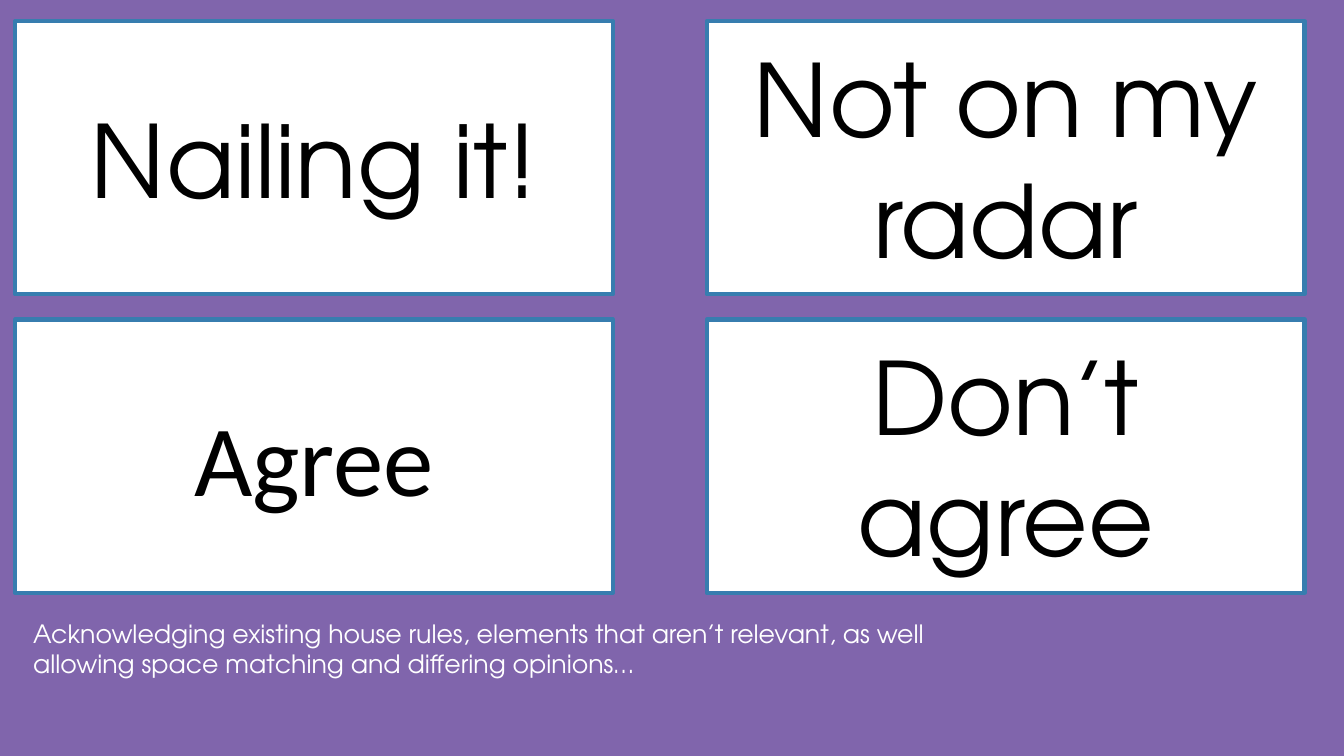
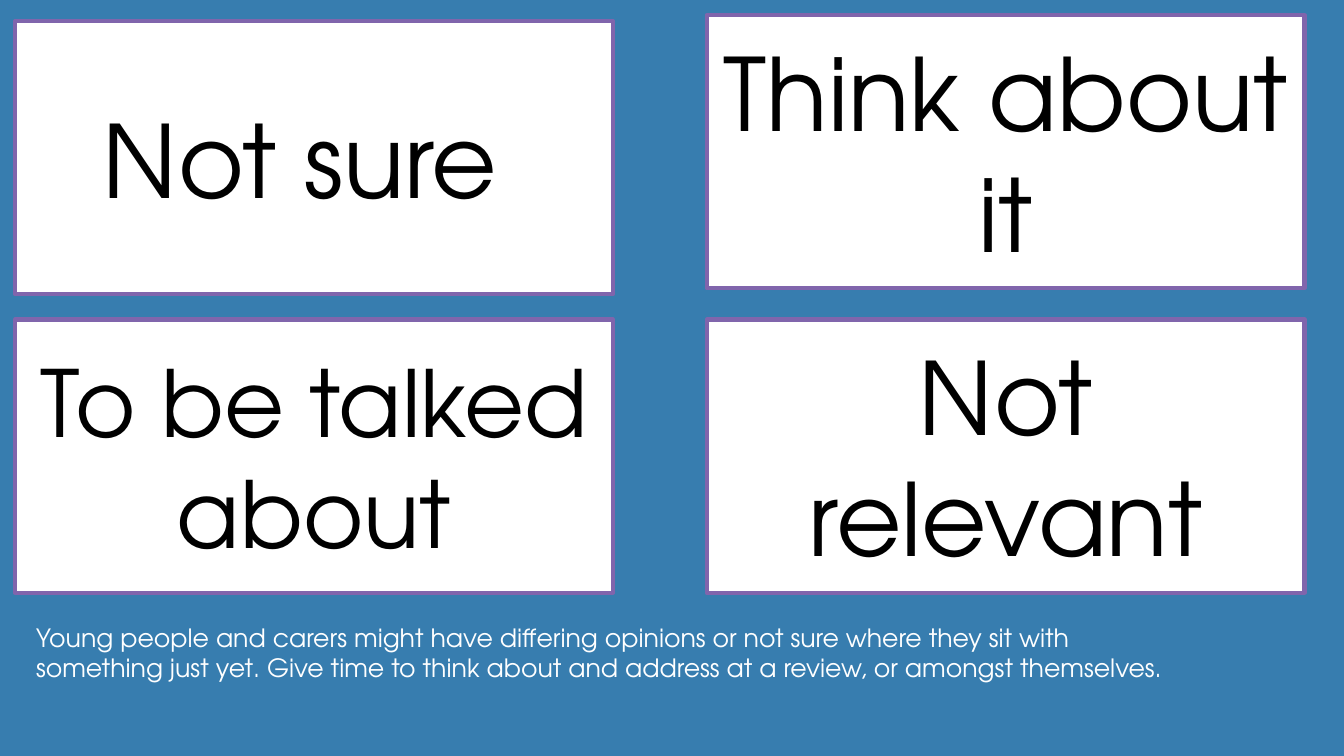
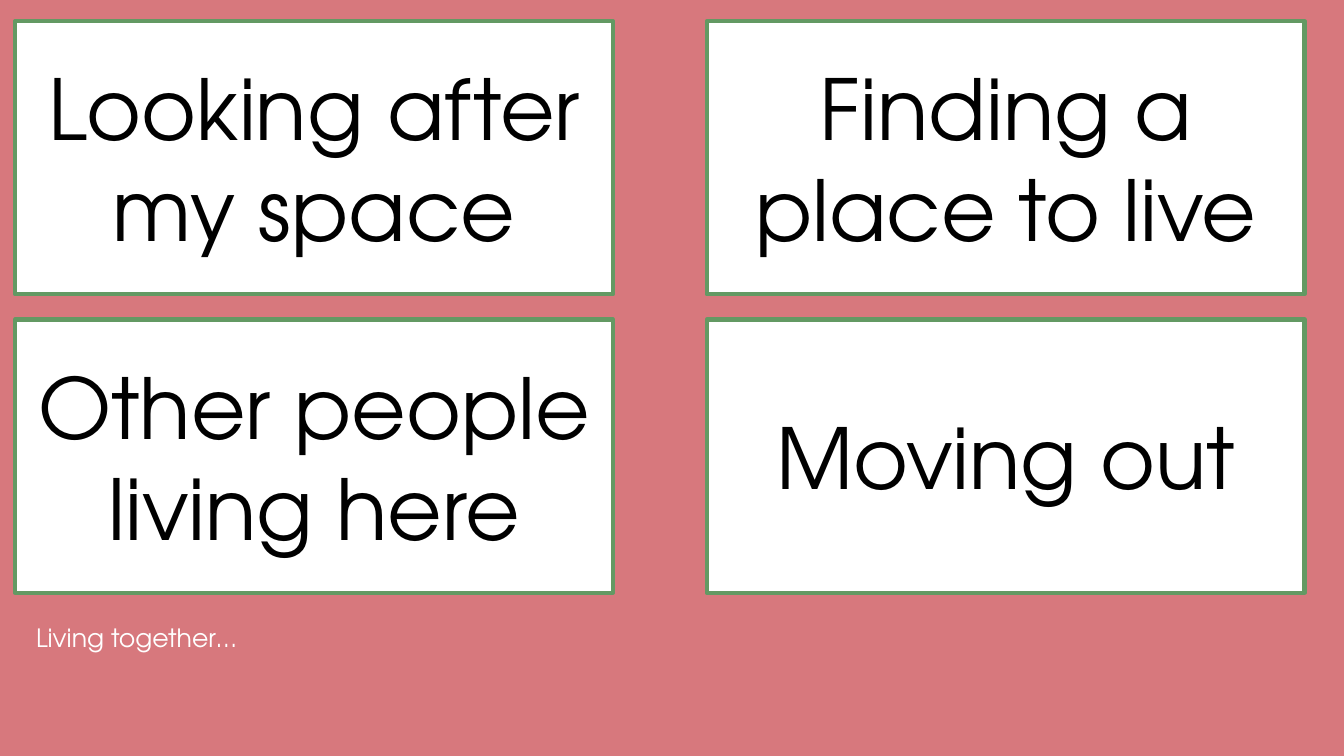
from dataclasses import dataclass

from pptx import Presentation
from pptx.dml.color import RGBColor
from pptx.enum.shapes import MSO_SHAPE
from pptx.enum.text import MSO_ANCHOR, MSO_AUTO_SIZE, PP_ALIGN
from pptx.util import Inches, Pt

RECT = MSO_SHAPE.RECTANGLE
MIDDLE = MSO_ANCHOR.MIDDLE
FIT_SHAPE = MSO_AUTO_SIZE.SHAPE_TO_FIT_TEXT
LEFT, CENTER = PP_ALIGN.LEFT, PP_ALIGN.CENTER

# Shared look
PURPLE = RGBColor(0x80, 0x65, 0xAC)
BLUE = RGBColor(0x37, 0x7D, 0xAF)
ROSE = RGBColor(0xD7, 0x78, 0x7D)
GREEN = RGBColor(0x63, 0x99, 0x63)
WHITE = RGBColor(0xFF, 0xFF, 0xFF)
BLACK = RGBColor(0x00, 0x00, 0x00)
FONT = "TeX Gyre Adventor"

# Card grid, in inches
GRID_LEFT, GRID_TOP = 0.15, 0.21
CARD_W, CARD_H = 5.93, 2.71
COL_STEP, ROW_STEP = 6.86, 2.96
COLUMNS = 2


@dataclass(frozen=True)
class Card:
    text: str
    size: int = 72
    font: str = FONT
    raised: float = 0


@dataclass(frozen=True)
class Caption:
    text: str
    width: float
    height: float = 0.71
    left: float = 0.26
    top: float = 6.12


@dataclass(frozen=True)
class CardSlide:
    background: RGBColor
    border: RGBColor
    cards: tuple[Card, ...]
    caption: Caption


SLIDES = (
    CardSlide(
        PURPLE, BLUE,
        (Card("Nailing it!"), Card("Not on my radar"),
         Card("Agree", font="Calibri"), Card("Don’t agree")),
        Caption("Acknowledging existing house rules, elements that aren’t relevant, "
                "as well allowing space matching and differing opinions…",
                width=9.84, left=0.23, top=6.08),
    ),
    CardSlide(
        BLUE, PURPLE,
        (Card("Not sure "), Card("Think about it", raised=0.06),
         Card("To be talked about", size=66), Card("Not relevant")),
        Caption("Young people and carers might have differing opinions or not sure "
                "where they sit with something just yet. Give time to think about "
                "and address at a review, or amongst themselves.", width=11.47),
    ),
    CardSlide(
        ROSE, GREEN,
        (Card("Looking after my space", size=60), Card("Finding a place to live", size=60),
         Card("Other people living here", size=60), Card("Moving out", size=60)),
        Caption("Living together…", width=4.83, height=0.4),
    ),
)


def write(tf, text: str, *, size: int, color: RGBColor, font: str = FONT,
          align=LEFT) -> None:
    tf.word_wrap = True
    p = tf.paragraphs[0]
    p.alignment = align
    r = p.add_run()
    r.text = text
    r.font.name = font
    r.font.size = Pt(size)
    r.font.color.rgb = color


def add_card(s, card: Card, index: int, border: RGBColor) -> None:
    row, col = divmod(index, COLUMNS)
    sp = s.shapes.add_shape(
        RECT,
        Inches(GRID_LEFT + col * COL_STEP),
        Inches(GRID_TOP + row * ROW_STEP - card.raised),
        Inches(CARD_W), Inches(CARD_H))
    sp.shadow.inherit = False
    sp.fill.solid()
    sp.fill.fore_color.rgb = WHITE
    sp.line.color.rgb = border
    sp.line.width = Pt(3)
    sp.text_frame.vertical_anchor = MIDDLE
    write(sp.text_frame, card.text, size=card.size, color=BLACK,
          font=card.font, align=CENTER)


def add_caption(s, caption: Caption) -> None:
    sp = s.shapes.add_textbox(Inches(caption.left), Inches(caption.top),
                              Inches(caption.width), Inches(caption.height))
    write(sp.text_frame, caption.text, size=18, color=WHITE)
    sp.text_frame.auto_size = FIT_SHAPE


def add_card_slide(prs, content: CardSlide) -> None:
    s = prs.slides.add_slide(prs.slide_layouts[6])
    s.background.fill.solid()
    s.background.fill.fore_color.rgb = content.background
    for index, card in enumerate(content.cards):
        add_card(s, card, index, content.border)
    add_caption(s, content.caption)


def main() -> None:
    prs = Presentation()
    prs.slide_width, prs.slide_height = Inches(13.33), Inches(7.5)
    for content in SLIDES:
        add_card_slide(prs, content)
    prs.save("out.pptx")


if __name__ == "__main__":
    main()
